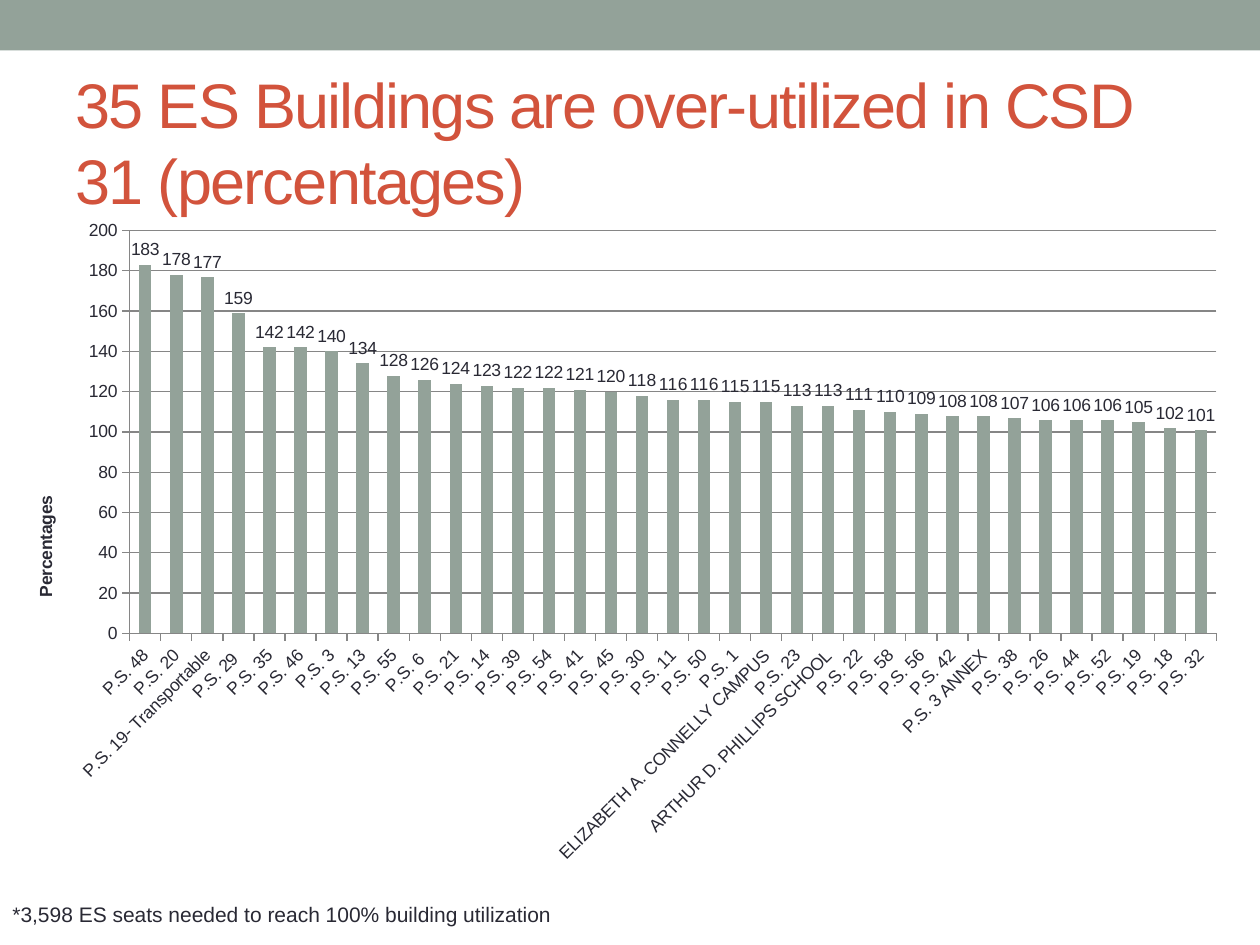
"""Build the slide on over-utilized elementary school buildings in CSD 31."""
from dataclasses import dataclass

import lxml.etree
import pptx
import pptx.chart.data
import pptx.dml.color
import pptx.enum.chart
import pptx.enum.shapes
import pptx.enum.text
import pptx.oxml
import pptx.oxml.ns
import pptx.util

Pt = pptx.util.Pt
qn = pptx.oxml.ns.qn
SAGE = pptx.dml.color.RGBColor(0x93, 0xA2, 0x99)
RUST = pptx.dml.color.RGBColor(0xD2, 0x53, 0x3C)
INK = pptx.dml.color.RGBColor(0x29, 0x29, 0x34)
GRID = pptx.dml.color.RGBColor(0x86, 0x86, 0x86)
FONT = "Arial"


@dataclass(frozen=True)
class Building:
    name: str
    percent: int


BUILDINGS = [
    Building("P.S. 48", 183),
    Building("P.S. 20", 178),
    Building("P.S. 19- Transportable", 177),
    Building("P.S. 29 ", 159),
    Building("P.S. 35", 142),
    Building("P.S. 46", 142),
    Building("P.S. 3", 140),
    Building("P.S. 13", 134),
    Building("P.S. 55", 128),
    Building("P.S. 6 ", 126),
    Building("P.S. 21", 124),
    Building("P.S. 14", 123),
    Building("P.S. 39", 122),
    Building("P.S. 54", 122),
    Building("P.S. 41", 121),
    Building("P.S. 45", 120),
    Building("P.S. 30", 118),
    Building("P.S. 11", 116),
    Building("P.S. 50", 116),
    Building("P.S. 1", 115),
    Building("ELIZABETH A. CONNELLY CAMPUS", 115),
    Building("P.S. 23", 113),
    Building("ARTHUR D. PHILLIPS SCHOOL", 113),
    Building("P.S. 22", 111),
    Building("P.S. 58", 110),
    Building("P.S. 56", 109),
    Building("P.S. 42", 108),
    Building("P.S. 3 ANNEX", 108),
    Building("P.S. 38", 107),
    Building("P.S. 26", 106),
    Building("P.S. 44", 106),
    Building("P.S. 52", 106),
    Building("P.S. 19", 105),
    Building("P.S. 18", 102),
    Building("P.S. 32", 101),
]


def style_font(font, size: float, color: pptx.dml.color.RGBColor, bold: bool = False) -> None:
    font.name, font.size, font.bold = FONT, Pt(size), bold
    font.color.rgb = color


def place_chart_part(part, position: int, **settings: str | float) -> None:
    for previous in part.findall(qn("c:layout")):
        part.remove(previous)
    layout = pptx.oxml.parse_xml(
        f'<c:layout xmlns:c="{pptx.oxml.ns.nsdecls("c").split(chr(34))[1]}"><c:manualLayout/></c:layout>'
    )
    for tag, value in settings.items():
        lxml.etree.SubElement(layout[0], qn(f"c:{tag}")).set("val", str(value))
    part.insert(position, layout)


def add_band(slide) -> None:
    band = slide.shapes.add_shape(
        pptx.enum.shapes.MSO_SHAPE.RECTANGLE, Pt(0), Pt(0), Pt(720), Pt(28.8)
    )
    band.shadow.inherit = False
    band.fill.solid()
    band.fill.fore_color.rgb = SAGE
    band.line.fill.background()


def add_title(slide, wording: str) -> None:
    title = slide.shapes.title
    title.left, title.top, title.width, title.height = Pt(36), Pt(41.76), Pt(648), Pt(77.76)
    title.text_frame.vertical_anchor = pptx.enum.text.MSO_ANCHOR.MIDDLE
    title.text_frame.auto_size = pptx.enum.text.MSO_AUTO_SIZE.NONE
    heading = title.text_frame.paragraphs[0]
    heading.alignment = pptx.enum.text.PP_ALIGN.LEFT
    run = heading.add_run()
    run.text = wording
    style_font(run.font, 36, RUST)
    run.font._element.set("spc", "-100")


def add_footnote(slide, wording: str) -> None:
    footnote = slide.shapes.add_textbox(Pt(0), Pt(511.92), Pt(325.44), Pt(21.6))
    footnote.text_frame.word_wrap = False
    footnote.text_frame.auto_size = pptx.enum.text.MSO_AUTO_SIZE.SHAPE_TO_FIT_TEXT
    run = footnote.text_frame.paragraphs[0].add_run()
    run.text = wording
    style_font(run.font, 12, INK)


def add_utilization_chart(slide, buildings: list[Building]) -> None:
    utilization = pptx.chart.data.CategoryChartData(number_format="0")
    utilization.categories = [building.name for building in buildings]
    utilization.add_series("Series 1", [building.percent for building in buildings])
    chart = slide.shapes.add_chart(
        pptx.enum.chart.XL_CHART_TYPE.COLUMN_CLUSTERED,
        Pt(3.6), Pt(120.24), Pt(705.6), Pt(383.76), utilization,
    ).chart
    chart.has_legend = chart.has_title = False
    style_font(chart.font, 10, INK)

    columns = chart.plots[0]
    columns.gap_width = 150
    columns.vary_by_categories = False
    columns.series[0].format.fill.solid()
    columns.series[0].format.fill.fore_color.rgb = SAGE
    columns.has_data_labels = True
    columns.data_labels.show_value = True
    columns.data_labels.position = pptx.enum.chart.XL_LABEL_POSITION.OUTSIDE_END
    style_font(columns.data_labels.font, 10, INK)

    schools, percentages = chart.category_axis, chart.value_axis
    for axis in (schools, percentages):
        axis.major_tick_mark = pptx.enum.chart.XL_TICK_MARK.OUTSIDE
        axis.minor_tick_mark = pptx.enum.chart.XL_TICK_MARK.NONE
        axis.format.line.color.rgb = GRID
        axis.format.line.width = Pt(0.75)
        style_font(axis.tick_labels.font, 10, INK)
    schools_labels = chart.element.find(f".//{qn('c:catAx')}/{qn('c:txPr')}/{qn('a:bodyPr')}")
    schools_labels.set("rot", "-2700000")
    schools_labels.set("vert", "horz")
    percentages.minimum_scale, percentages.maximum_scale, percentages.major_unit = 0, 200, 20
    percentages.has_major_gridlines = True
    percentages.major_gridlines.format.line.color.rgb = GRID
    percentages.major_gridlines.format.line.width = Pt(0.75)

    caption = percentages.axis_title
    run = caption.text_frame.paragraphs[0].add_run()
    run.text = "Percentages"
    style_font(run.font, 10, INK, bold=True)
    caption_body = caption.element.find(f".//{qn('a:bodyPr')}")
    caption_body.set("rot", "-5400000")
    caption_body.set("vert", "horz")
    place_chart_part(caption.element, 1, xMode="edge", yMode="edge", x=0.02, y=0.42)
    place_chart_part(
        chart.element.find(f".//{qn('c:plotArea')}"), 0,
        layoutTarget="inner", xMode="edge", yMode="edge", x=0.1, y=0.03, w=0.88, h=0.6,
    )


def main() -> None:
    presentation = pptx.Presentation()
    presentation.slide_width, presentation.slide_height = Pt(720), Pt(540)
    slide = presentation.slides.add_slide(presentation.slide_layouts[5])
    add_band(slide)
    add_title(slide, "35 ES Buildings are over-utilized in CSD 31 (percentages)")
    add_footnote(slide, "*3,598 ES seats needed to reach 100% building utilization")
    add_utilization_chart(slide, BUILDINGS)
    presentation.save("out.pptx")


if __name__ == "__main__":
    main()
